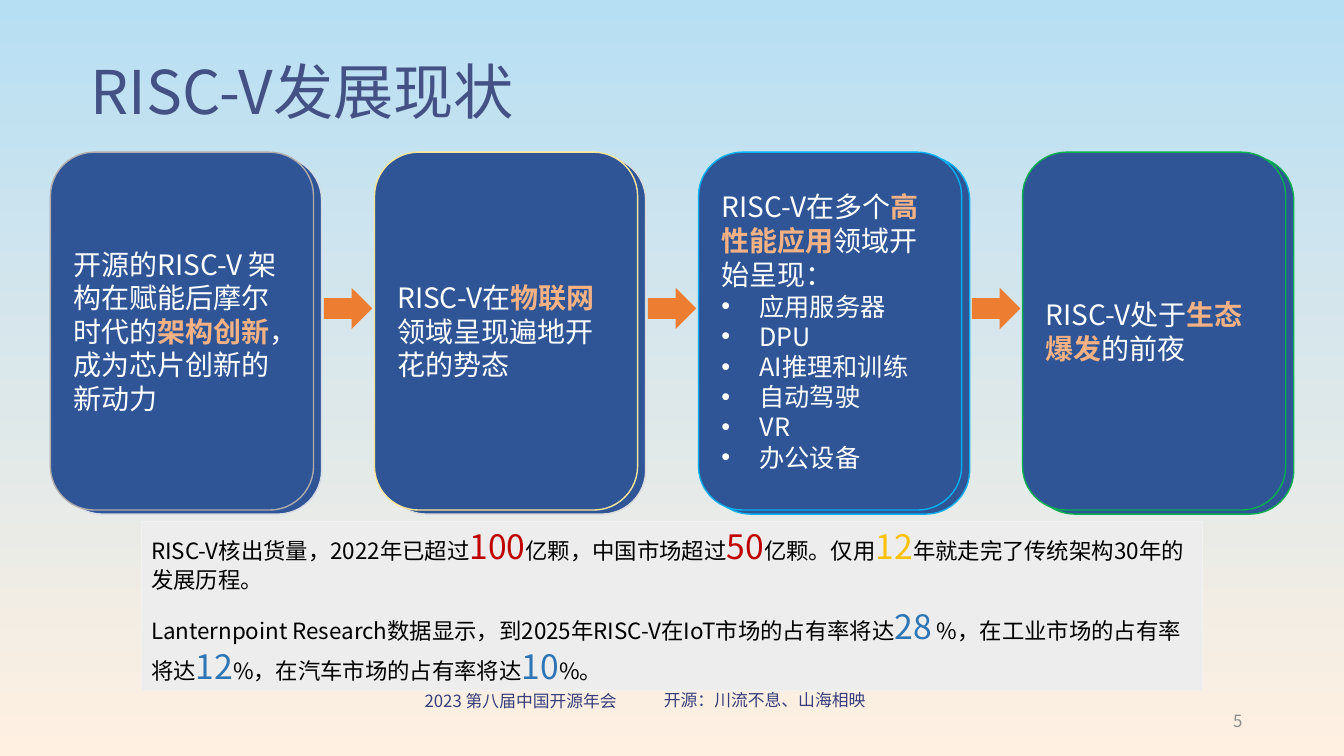
from lxml import etree
from pptx import Presentation
from pptx.dml.color import RGBColor
from pptx.enum import lang, shapes, text
from pptx.oxml import ns
from pptx.util import Inches, Pt

FONT = "Noto Sans CJK SC"
COLORS = {
    "sky": "B7DFF4", "sand": "FFF0E1", "footer": "363E7D", "title": "445185",
    "number": "8C8C8C", "card": "2F5597", "white": "FFFFFF", "accent": "F4B183",
    "arrow": "ED7D31", "panel": "EDEDED", "panel_edge": "F2F2F2", "black": "000000",
    "red": "C00000", "gold": "FFC000", "blue": "2E75B6",
}
TITLE = "RISC-V发展现状"
MARGINALS = [
    ("2023 第八届中国开源年会", (3.79, 6.8, 2.75, 0.3), "footer", "CENTER", "TOP"),
    ("开源：川流不息、山海相映", (6.38, 6.79, 2.41, 0.3), "footer", "CENTER", "TOP"),
    ("5", (9.42, 6.95, 3, 0.4), "number", "RIGHT", "MIDDLE"),
]
STAGES = [
    {"edges": ("D6DCE5", "AFABAB"),
     "words": ("开源的RISC-V 架构在赋能后摩尔时代的", "架构创新", "，成为芯片创新的新动力")},
    {"edges": ("DBDBDB", "FFE699"),
     "words": ("RISC-V在", "物联网", "领域呈现遍地开花的势态")},
    {"edges": ("00B0F0", "00B0F0"),
     "words": ("RISC-V在多个", "高性能应用", "领域开始呈现："),
     "fields": ("应用服务器", "DPU", "AI推理和训练", "自动驾驶", "VR", "办公设备")},
    {"edges": ("00B050", "00B050"),
     "words": ("RISC-V处于", "生态爆发", "的前夜")},
]
STATISTICS = [
    [("RISC-V核出货量，2022年已超过", "black"), ("100", "red"),
     ("亿颗，中国市场超过", "black"), ("50", "red"), ("亿颗。仅用", "black"),
     ("12", "gold"), ("年就走完了传统架构30年的发展历程。", "black")],
    [("Lanternpoint Research数据显示，到2025年RISC-V在IoT市场的占有率将达", "black"),
     ("28", "blue"), (" %，在工业市场的占有率将达", "black"), ("12", "blue"),
     ("%，在汽车市场的占有率将达", "black"), ("10", "blue"), ("%。", "black")],
]

CARD_LEFT, CARD_TOP, CARD_W, CARD_H = 0.5, 1.51, 2.61, 3.55
CARD_STEP = 3.214
BACK_DX, BACK_DY = 0.08, 0.04
ARROW_W, ARROW_H, ARROW_MIDDLE = 0.48, 0.41, 3.06
BULLET_INDENT = 0.38


def rgb(hex_color):
    return RGBColor.from_string(hex_color)


def box(left, top, width, height):
    return [Inches(v) for v in (left, top, width, height)]


def add_run(paragraph, words, size, color, bold=False):
    run = paragraph.add_run()
    run.text = words
    run.font.size = Pt(size)
    run.font.bold = bold
    run.font.name = FONT
    run.font.language_id = lang.MSO_LANGUAGE_ID.SIMPLIFIED_CHINESE
    run.font.color.rgb = rgb(COLORS[color])
    east_asian = etree.SubElement(run.font._element, ns.qn("a:ea"))
    east_asian.set("typeface", FONT)


def add_filled(parent, kind, place, fill, edge=None, edge_width=1):
    shape = parent.add_shape(kind, *box(*place))
    shape.shadow.inherit = False
    shape.fill.solid()
    shape.fill.fore_color.rgb = rgb(fill)
    if edge:
        shape.line.color.rgb = rgb(edge)
        shape.line.width = Pt(edge_width)
    else:
        shape.line.fill.background()
    return shape


def add_bullet(paragraph):
    props = paragraph._p.get_or_add_pPr()
    props.set("marL", str(Inches(BULLET_INDENT)))
    props.set("indent", str(-Inches(BULLET_INDENT)))
    etree.SubElement(props, ns.qn("a:buFont")).set("typeface", "Arial")
    etree.SubElement(props, ns.qn("a:buChar")).set("char", "•")


def add_marginal(slide, words, place, color, align, anchor):
    frame = slide.shapes.add_textbox(*box(*place)).text_frame
    frame.word_wrap = True
    frame.vertical_anchor = text.MSO_ANCHOR[anchor]
    frame.paragraphs[0].alignment = text.PP_ALIGN[align]
    add_run(frame.paragraphs[0], words, 12, color)


def add_stage(slide, left, stage):
    group = slide.shapes.add_group_shape().shapes
    rounded = shapes.MSO_SHAPE.ROUNDED_RECTANGLE
    back_edge, front_edge = stage["edges"]
    add_filled(group, rounded, (left + BACK_DX, CARD_TOP + BACK_DY, CARD_W, CARD_H),
               COLORS["card"], back_edge)
    card = add_filled(group, rounded, (left, CARD_TOP, CARD_W, CARD_H),
                      COLORS["card"], front_edge)
    frame = card.text_frame
    frame.word_wrap = True
    frame.vertical_anchor = text.MSO_ANCHOR.MIDDLE
    summary = frame.paragraphs[0]
    summary.alignment = text.PP_ALIGN.LEFT
    before, highlight, after = stage["words"]
    add_run(summary, before, 20, "white")
    add_run(summary, highlight, 20, "accent", True)
    add_run(summary, after, 20, "white")
    for field in stage.get("fields", ()):
        item = frame.add_paragraph()
        item.alignment = text.PP_ALIGN.LEFT
        add_bullet(item)
        add_run(item, field, 18, "white")


def add_statistics(slide):
    panel = add_filled(slide.shapes, shapes.MSO_SHAPE.RECTANGLE, (1.4, 5.17, 10.53, 1.68),
                       COLORS["panel"], COLORS["panel_edge"], 0.75)
    frame = panel.text_frame
    frame.word_wrap = True
    frame.vertical_anchor = text.MSO_ANCHOR.TOP
    for i, sentence in enumerate(STATISTICS):
        paragraph = frame.add_paragraph() if i else frame.paragraphs[0]
        paragraph.alignment = text.PP_ALIGN.LEFT
        if i:
            paragraph.space_before = Pt(8.7)
        for words, color in sentence:
            add_run(paragraph, words, 16 if color == "black" else 24, color)


def main():
    deck = Presentation()
    deck.slide_width, deck.slide_height = Inches(13.33), Inches(7.5)
    slide = deck.slides.add_slide(deck.slide_layouts[5])

    backdrop = slide.background.fill
    backdrop.gradient()
    backdrop.gradient_angle = 270
    for stop, position, color in zip(backdrop.gradient_stops, (0, 1), ("sky", "sand")):
        stop.position = position
        stop.color.rgb = rgb(COLORS[color])

    title = slide.shapes.title
    title.left, title.top, title.width, title.height = box(0.8, 0.22, 11.5, 1.45)
    title.text_frame.vertical_anchor = text.MSO_ANCHOR.MIDDLE
    heading = title.text_frame.paragraphs[0]
    heading.alignment = text.PP_ALIGN.LEFT
    heading.line_spacing = 0.9
    add_run(heading, TITLE, 43, "title")

    for marginal in MARGINALS:
        add_marginal(slide, *marginal)

    lefts = [CARD_LEFT + i * CARD_STEP for i in range(len(STAGES))]
    for left, stage in zip(lefts, STAGES):
        add_stage(slide, left, stage)
    for left, following in zip(lefts, lefts[1:]):
        center = (left + CARD_W + BACK_DX + following) / 2
        place = (center - ARROW_W / 2, ARROW_MIDDLE - ARROW_H / 2, ARROW_W, ARROW_H)
        add_filled(slide.shapes, shapes.MSO_SHAPE.RIGHT_ARROW, place, COLORS["arrow"])

    add_statistics(slide)
    deck.save("out.pptx")


if __name__ == "__main__":
    main()
